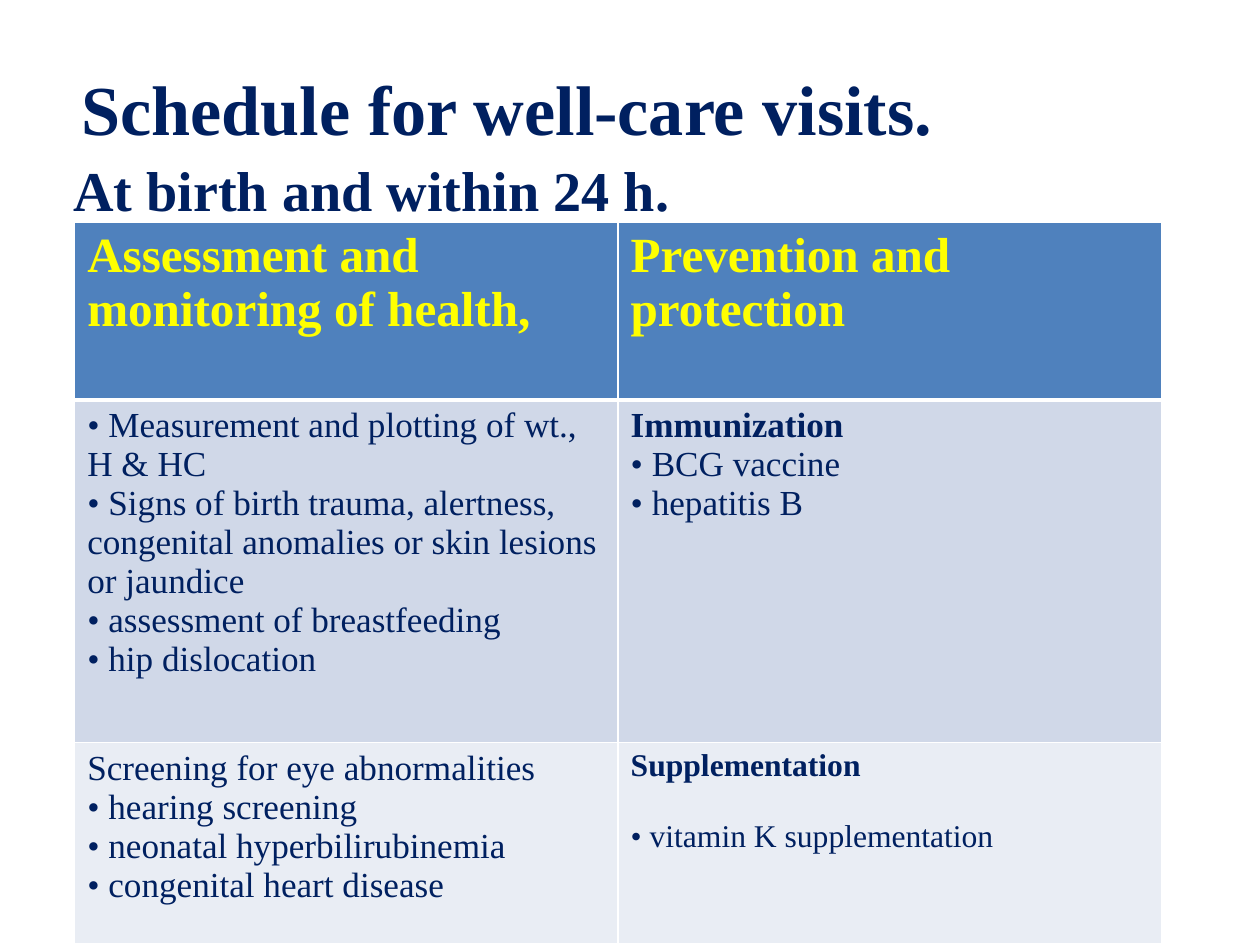
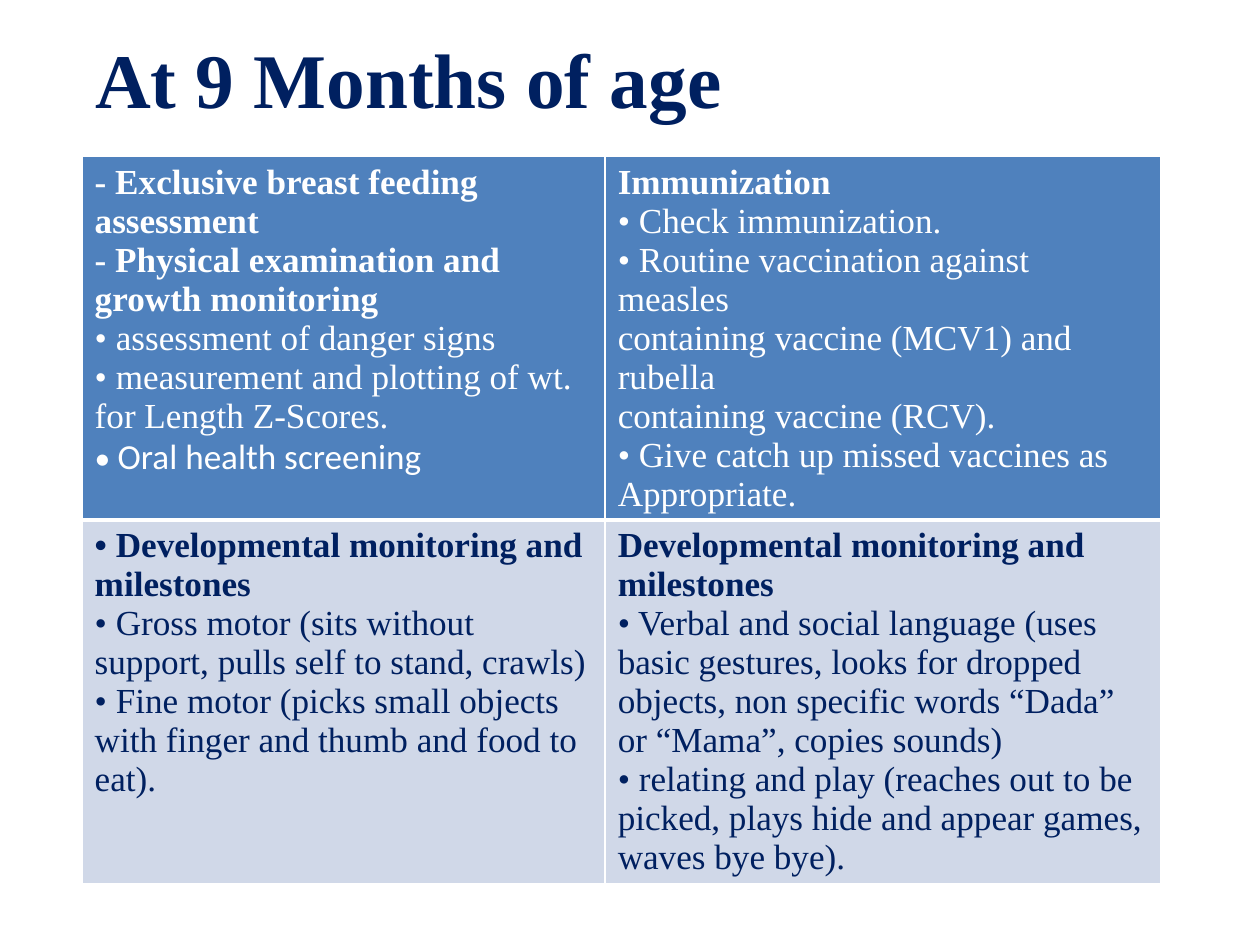
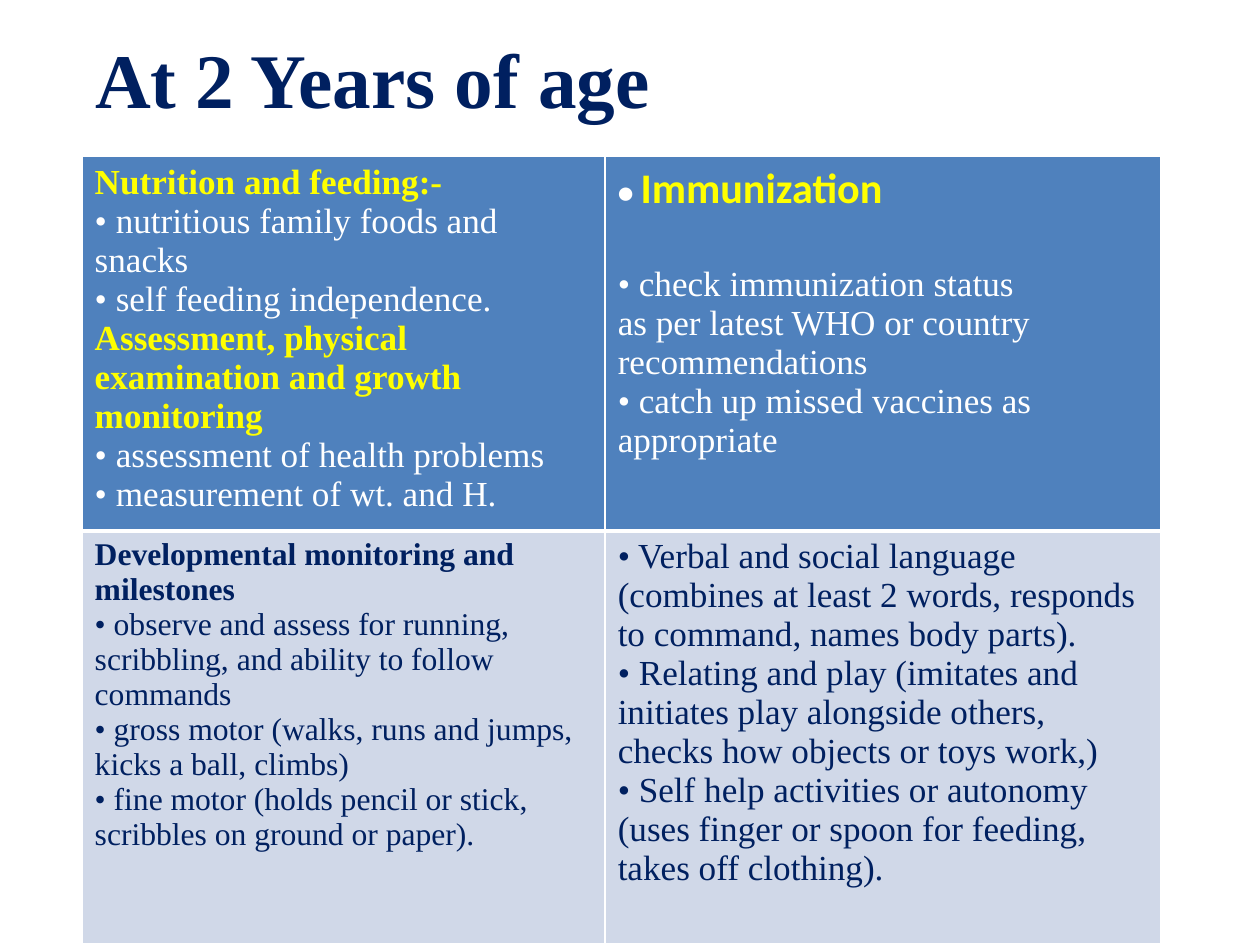
from dataclasses import dataclass

import pptx
import pptx.dml.color
import pptx.enum.text
import pptx.oxml
import pptx.oxml.ns
import pptx.util
from pptx.util import Cm, Pt

COLORS = {
    "navy": "002060",
    "yellow": "FFFF00",
    "white": "FFFFFF",
    "header": "4F81BD",
    "band_dark": "D0D8E8",
    "band_light": "E9EDF4",
}
ROW_FILLS = ["header", "band_dark", "band_light"]
SERIF, SANS = "Times New Roman", "Calibri"
TITLE_ONLY = 5


@dataclass
class Line:
    """One paragraph of a cell; no colour means the colour of its row."""
    text: str
    size: int = 20
    color: str = ""
    bold: bool = False
    font: str = SERIF
    gap: int = 0
    bullet_size: int = 0


def rgb(name):
    return pptx.dml.color.RGBColor.from_string(COLORS[name])


def set_font(font, name, color, bold):
    font.name = name
    font.bold = bold
    font.color.rgb = rgb(color)


def add_title(s, box, lines, indent):
    """Fill the title with (text, size) lines; indent moves the first one."""
    title = s.shapes.title
    title.left, title.top, title.width, title.height = (Cm(v) for v in box)
    tf = title.text_frame
    tf.margin_left = tf.margin_right = tf.margin_top = tf.margin_bottom = 0
    tf.auto_size = pptx.enum.text.MSO_AUTO_SIZE.NONE
    tf.vertical_anchor = pptx.enum.text.MSO_ANCHOR.BOTTOM
    tf.word_wrap = True
    p = tf.paragraphs[0]
    p.alignment = pptx.enum.text.PP_ALIGN.LEFT
    p.line_spacing = 1.08
    p._p.get_or_add_pPr().set("indent", str(Cm(indent)))
    set_font(p.font, SERIF, "navy", True)
    for i, (text, size) in enumerate(lines):
        if i:
            p.add_line_break()
        r = p.add_run()
        r.text = text
        r.font.size = Pt(size)


def set_borders(cell, row):
    tcPr = cell._tc.get_or_add_tcPr()
    widths = {"lnL": 1, "lnR": 1, "lnT": 3 if row == 1 else 1, "lnB": 3 if row == 0 else 1}
    for tag, width in widths.items():
        tcPr.append(pptx.oxml.parse_xml(
            f'<a:{tag} {pptx.oxml.ns.nsdecls("a")} w="{Pt(width)}"><a:solidFill>'
            f'<a:srgbClr val="{COLORS["white"]}"/></a:solidFill></a:{tag}>'))


def write_line(p, line, row_color):
    set_font(p.font, line.font, line.color or row_color, line.bold)
    p.font.size = Pt(line.size)
    if line.gap:
        p.space_before = Pt(line.gap)
    if line.bullet_size:
        bullet = p.add_run()
        bullet.text = "• "
        bullet.font.size = Pt(line.bullet_size)
        bullet.font.color.rgb = rgb(row_color)
    p.add_run().text = line.text


def fill_cell(cell, row, lines):
    set_borders(cell, row)
    cell.fill.solid()
    cell.fill.fore_color.rgb = rgb(ROW_FILLS[row])
    tf = cell.text_frame
    for i, line in enumerate(lines):
        p = tf.add_paragraph() if i else tf.paragraphs[0]
        line = Line(line) if isinstance(line, str) else line
        write_line(p, line, "navy" if row else "white")


def add_visit_table(s, left, top, widths, heights, rows):
    frame = s.shapes.add_table(len(heights), len(widths), Cm(left), Cm(top),
                               Cm(sum(widths)), Cm(sum(heights)))
    table = frame.table
    table.first_row = table.horz_banding = False
    for column, width in zip(table.columns, widths):
        column.width = Cm(width)
    for i, (height, cells) in enumerate(zip(heights, rows)):
        table.rows[i].height = Cm(height)
        for j, lines in enumerate(cells):
            fill_cell(table.cell(i, j), i, lines)


def birth_slide(prs):
    s = prs.slides.add_slide(prs.slide_layouts[TITLE_ONLY])
    add_title(s, (1.47, 1.4, 22.35, 3.07),
              [("Schedule for well-care visits.", 40), ("At birth and within 24 h.", 32)], 0.17)
    add_visit_table(s, 1.5, 4.47, [10.92, 10.92], [3.57, 6.88, 4.05], BIRTH)


def age_slide(prs, title, heights, rows):
    s = prs.slides.add_slide(prs.slide_layouts[TITLE_ONLY])
    add_title(s, (1.47, 0.61, 22.35, 1.88), [(title, 44)], 0.44)
    add_visit_table(s, 1.65, 3.15, [10.51, 11.16], heights, rows)


BIRTH = [
    [
        [Line("Assessment and monitoring of health,", 28, "yellow", True)],
        [Line("Prevention and protection", 28, "yellow", True)],
    ],
    [
        ["• Measurement and plotting of wt., H & HC",
         "• Signs of birth trauma, alertness, congenital anomalies or skin lesions or jaundice",
         "• assessment of breastfeeding",
         "• hip dislocation"],
        [Line("Immunization", bold=True),
         "• BCG vaccine",
         "• hepatitis B"],
    ],
    [
        ["Screening for eye abnormalities",
         "• hearing screening",
         "• neonatal hyperbilirubinemia",
         "• congenital heart disease"],
        [Line("Supplementation", 18, bold=True),
         Line("• vitamin K supplementation", 18, gap=20)],
    ],
]

NINE_MONTHS = [
    [
        [Line("- Exclusive breast feeding assessment", bold=True),
         Line("- Physical examination and growth monitoring", bold=True),
         "• assessment of danger signs",
         "• measurement and plotting of wt. for Length Z-Scores.",
         Line("Oral health screening", font=SANS, bullet_size=18)],
        [Line("Immunization", bold=True),
         "• Check immunization.",
         "• Routine vaccination against measles",
         "containing vaccine (MCV1) and rubella",
         "containing vaccine (RCV).",
         "• Give catch up missed vaccines as",
         "Appropriate."],
    ],
    [
        [Line("• Developmental monitoring and milestones", bold=True),
         "• Gross motor (sits without support, pulls self to stand, crawls)",
         "• Fine motor (picks small objects with finger and thumb and food to eat)."],
        [Line("Developmental monitoring and milestones", bold=True),
         "• Verbal and social language (uses basic gestures, looks for dropped objects, "
         "non specific words “Dada” or “Mama”, copies sounds)",
         "• relating and play (reaches out to be picked, plays hide and appear games, "
         "waves bye bye)."],
    ],
]

TWO_YEARS = [
    [
        [Line("Nutrition and feeding:-", color="yellow", bold=True),
         "• nutritious family foods and snacks",
         "• self feeding independence.",
         Line("Assessment, physical examination and growth monitoring",
              color="yellow", bold=True),
         "• assessment of health problems",
         "• measurement of wt. and H."],
        [Line("Immunization", 24, "yellow", True, SANS, bullet_size=18),
         Line("• check immunization status", gap=29),
         "as per latest WHO or country",
         "recommendations",
         "• catch up missed vaccines as",
         "appropriate"],
    ],
    [
        [Line("Developmental monitoring and milestones", 18, bold=True),
         Line("• observe and assess for running, scribbling, and ability to follow commands", 18),
         Line("• gross motor (walks, runs and jumps, kicks a ball, climbs)", 18),
         Line("• fine motor (holds pencil or stick, scribbles on ground or paper).", 18)],
        ["• Verbal and social language (combines at least 2 words, responds to command, "
         "names body parts).",
         "• Relating and play (imitates and initiates play alongside others, checks how "
         "objects or toys work,)",
         "• Self help activities or autonomy (uses finger or spoon for feeding, takes off "
         "clothing)."],
    ],
]


def main():
    prs = pptx.Presentation()
    prs.slide_width, prs.slide_height = Cm(25.32), Cm(18.97)
    birth_slide(prs)
    age_slide(prs, "At 9 Months of age", [7.28, 7.28], NINE_MONTHS)
    age_slide(prs, "At 2 Years of age", [7.52, 8.3], TWO_YEARS)
    prs.save("out.pptx")


if __name__ == "__main__":
    main()
